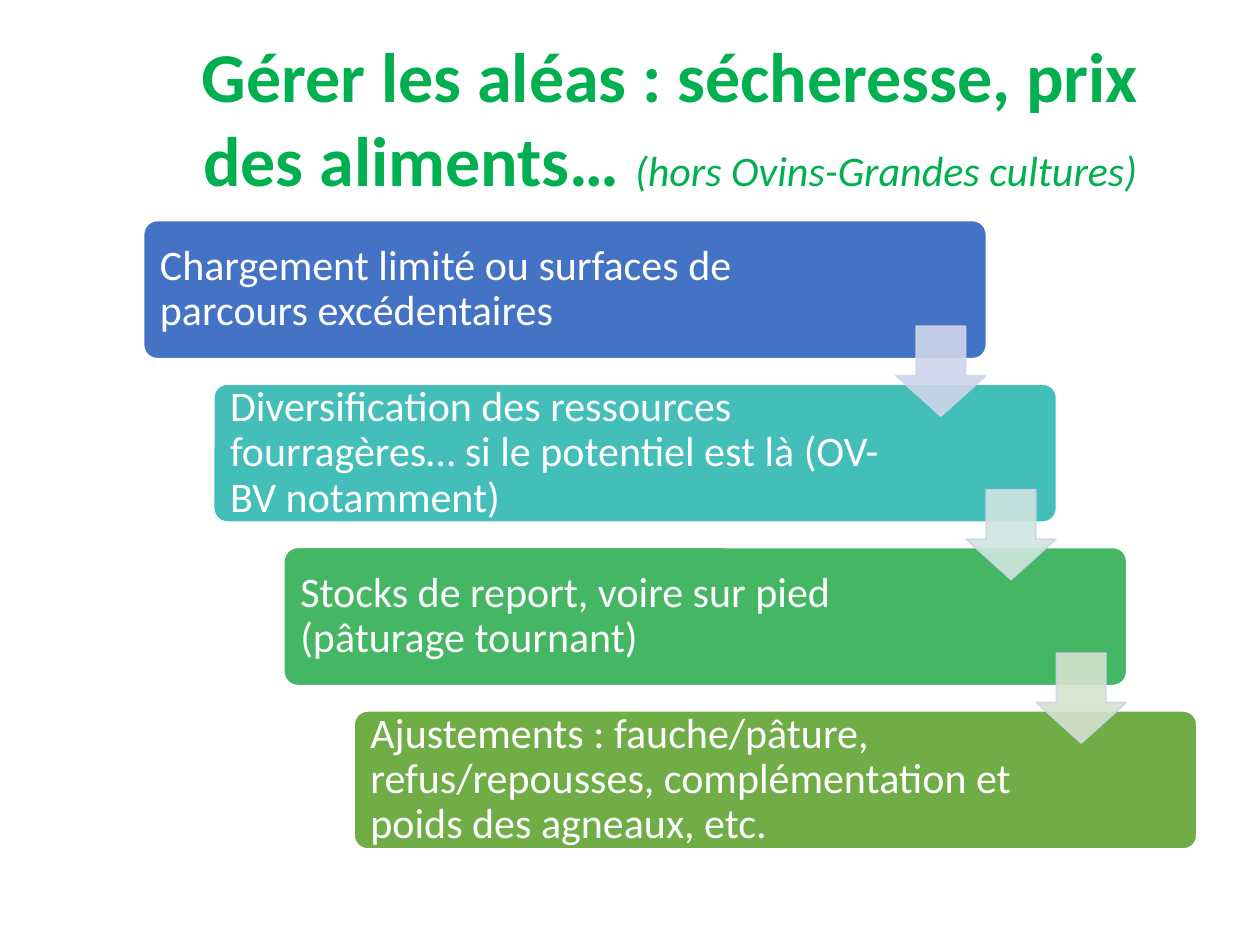
"""Build the slide on managing farm hazards as a descending staircase of steps."""
from lxml import etree
from pptx import Presentation
from pptx import util as u
from pptx.dml.color import RGBColor
from pptx.enum import shapes, text
from pptx.oxml.ns import qn

FONT = "Calibri"
WHITE = "FFFFFF"
GREEN = "00B050"
ARROW_EDGE = "CFD5EA"
STEP_X, STEP_Y = 40.1, 93.4
STEPS = [
    ("Chargement limité ou surfaces de parcours excédentaires", "4472C4"),
    ("Diversification des ressources fourragères… si le potentiel est là "
     "(OV-BV notamment)", "43BEB9"),
    ("Stocks de report, voire sur pied (pâturage tournant)", "45B664"),
    ("Ajustements : fauche/pâture, refus/repousses, complémentation et "
     "poids des agneaux, etc.", "70AD47"),
]
ARROW_FILLS = ["CFD5EA", "CFE6E0", "D5E3CF"]


def paint(color_format, hex_color, opacity=100):
    """Set a colour from a hex string, with opacity in percent."""
    color_format.rgb = RGBColor.from_string(hex_color)
    if opacity < 100:
        for color in color_format._xFill.iter(qn("a:srgbClr")):
            etree.SubElement(color, qn("a:alpha")).set("val", str(opacity * 1000))


def add_block(slide, preset, box, adjustments, fill, edge, opacity=100):
    """Add a filled, outlined preset shape; box is in points."""
    block = slide.shapes.add_shape(preset, *(u.Pt(length) for length in box))
    for index, value in enumerate(adjustments):
        block.adjustments[index] = value
    block.shadow.inherit = False
    block.fill.solid()
    paint(block.fill.fore_color, fill, opacity)
    block.line.width = u.Pt(1)
    block.line.fill.solid()
    paint(block.line.color, edge, opacity)
    return block


def add_step(slide, index, label, fill):
    """Add one stair with its label."""
    box = (82 + index * STEP_X, 126 + index * STEP_Y, 481.7, 79)
    step = add_block(slide, shapes.MSO_SHAPE.ROUNDED_RECTANGLE, box, [0.1], fill, WHITE)
    frame = step.text_frame
    frame.word_wrap = True
    frame.vertical_anchor = text.MSO_ANCHOR.MIDDLE
    frame.margin_left = frame.margin_top = frame.margin_bottom = u.Pt(7.2)
    frame.margin_right = u.Pt(98)
    paragraph = frame.paragraphs[0]
    paragraph.text = label
    paragraph.alignment = text.PP_ALIGN.LEFT
    paragraph.line_spacing = 0.9
    paragraph.font.name = FONT
    paragraph.font.size = u.Pt(24)
    paint(paragraph.font.color, WHITE)


def add_arrow(slide, index, fill):
    """Add the translucent arrow leading from one stair to the next."""
    box = (512 + index * STEP_X, 186.5 + index * STEP_Y, 51.3, 51.3)
    add_block(slide, shapes.MSO_SHAPE.DOWN_ARROW, box, [0.55, 0.45],
              fill, ARROW_EDGE, opacity=90)


def add_title(slide):
    """Place the title and write its bold and italic parts."""
    title = slide.shapes.title
    title.left, title.top = u.Pt(82), u.Pt(21.6)
    title.width, title.height = u.Pt(602), u.Pt(90)
    frame = title.text_frame
    frame.auto_size = text.MSO_AUTO_SIZE.NONE
    frame.vertical_anchor = text.MSO_ANCHOR.MIDDLE
    paragraph = frame.paragraphs[0]
    paragraph.alignment = text.PP_ALIGN.CENTER
    parts = [("Gérer les aléas : sécheresse, prix des aliments… ", 40, True),
             ("(hors Ovins-Grandes cultures)", 24, False)]
    for words, size, bold in parts:
        run = paragraph.add_run()
        run.text = words
        run.font.name = FONT
        run.font.size = u.Pt(size)
        run.font.bold = bold
        run.font.italic = not bold
        paint(run.font.color, GREEN)


def main():
    """Build and save the slide."""
    deck = Presentation()
    deck.slide_width, deck.slide_height = u.Pt(720), u.Pt(540)
    slide = deck.slides.add_slide(deck.slide_layouts[5])
    add_title(slide)
    for index, (label, fill) in enumerate(STEPS):
        add_step(slide, index, label, fill)
    for index, fill in enumerate(ARROW_FILLS):
        add_arrow(slide, index, fill)
    deck.save("out.pptx")


if __name__ == "__main__":
    main()
